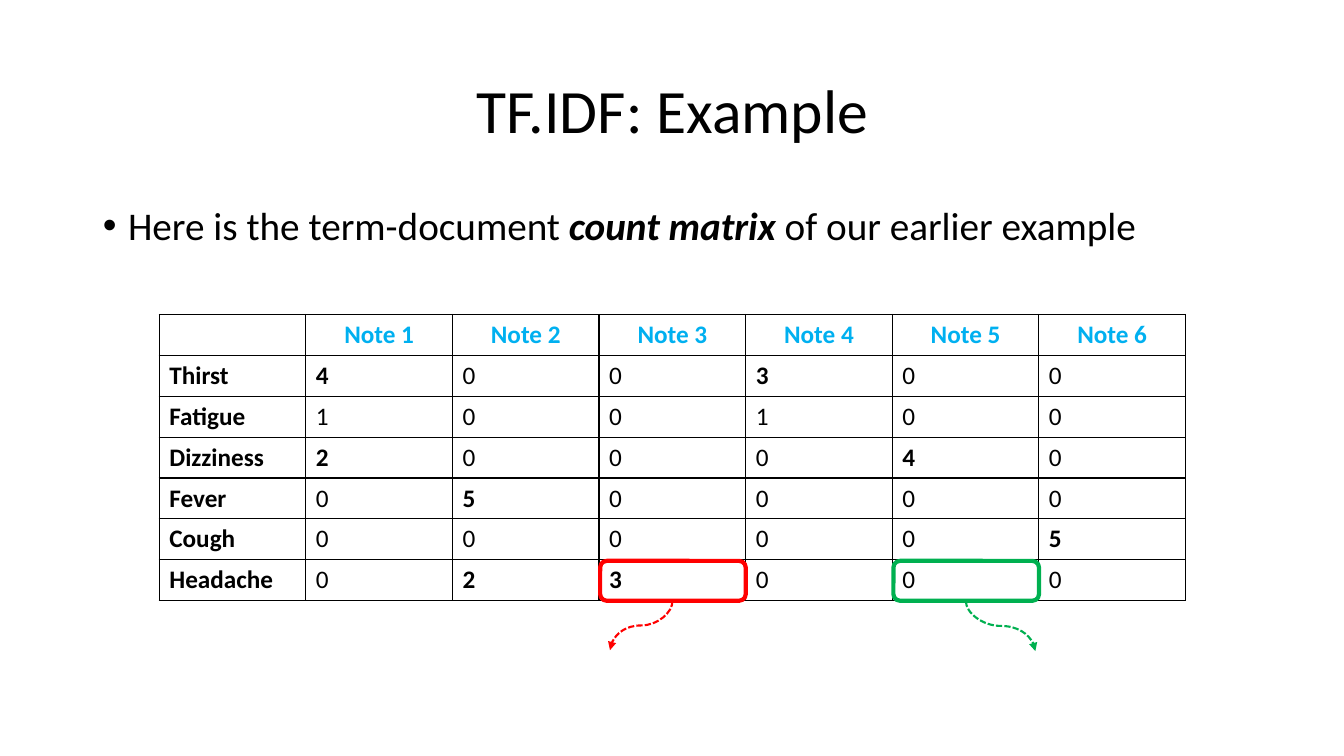
from dataclasses import dataclass

from lxml.etree import SubElement
from pptx import Presentation
from pptx.dml.color import RGBColor
from pptx.enum.dml import MSO_LINE
from pptx.enum.shapes import MSO_CONNECTOR, MSO_SHAPE
from pptx.enum.text import MSO_ANCHOR, PP_ALIGN
from pptx.oxml.ns import qn
from pptx.util import Inches, Pt

COLORS = {"text": "000000", "note": "00B0F0", "red": "FF0000", "green": "00B050"}
FONT = "Calibri"

TABLE_LEFT, TABLE_TOP = 1.58, 3.12
TABLE_WIDTH, TABLE_HEIGHT = 10.18, 2.84
NOTES = [f"Note {number}" for number in range(1, 7)]
COUNTS = {
    "Thirst": (4, 0, 0, 3, 0, 0),
    "Fatigue": (1, 0, 0, 1, 0, 0),
    "Dizziness": (2, 0, 0, 0, 4, 0),
    "Fever": (0, 5, 0, 0, 0, 0),
    "Cough": (0, 0, 0, 0, 0, 5),
    "Headache": (0, 2, 3, 0, 0, 0),
}
COLUMN_WIDTH = TABLE_WIDTH / (len(NOTES) + 1)
ROW_HEIGHT = TABLE_HEIGHT / (len(COUNTS) + 1)


@dataclass
class Highlight:
    """A framed table cell with a curved arrow that drops away from it."""
    row: int
    column: int
    color: str
    shift: float
    drop: float


HIGHLIGHTS = [
    Highlight(row=6, column=3, color="red", shift=-0.62, drop=0.49),
    Highlight(row=6, column=5, color="green", shift=0.69, drop=0.5),
]


def rgb(name: str) -> RGBColor:
    return RGBColor.from_string(COLORS[name])


def add_text(paragraph, text: str, *, size: float, color: str = "text",
             bold: bool = False, italic: bool = False, align=None) -> None:
    run = paragraph.add_run()
    run.text = text
    font = run.font
    font.name, font.size, font.bold, font.italic = FONT, Pt(size), bold, italic
    font.color.rgb = rgb(color)
    if align is not None:
        paragraph.alignment = align


def place(shape, left: float, top: float, width: float, height: float) -> None:
    shape.left, shape.top = Inches(left), Inches(top)
    shape.width, shape.height = Inches(width), Inches(height)


def add_title(slide) -> None:
    title = slide.shapes.title
    place(title, 0.92, 0.4, 11.5, 1.45)
    title.text_frame.vertical_anchor = MSO_ANCHOR.MIDDLE
    paragraph = title.text_frame.paragraphs[0]
    paragraph.line_spacing = 0.9
    add_text(paragraph, "TF.IDF: Example", size=44, align=PP_ALIGN.CENTER)


def add_body(slide) -> None:
    body = slide.placeholders[1]
    place(body, 0.92, 2, 11.72, 5.1)
    paragraph = body.text_frame.paragraphs[0]
    paragraph.line_spacing, paragraph.space_before = 0.9, Pt(10)
    properties = paragraph._p.get_or_add_pPr()
    properties.set("marL", str(Inches(0.25)))
    properties.set("indent", str(Inches(-0.25)))
    SubElement(properties, qn("a:buFont"), typeface="Arial")
    SubElement(properties, qn("a:buChar"), char="•")
    add_text(paragraph, "Here is the term-document ", size=28)
    add_text(paragraph, "count matrix ", size=28, bold=True, italic=True)
    add_text(paragraph, "of our earlier example", size=28)


def outline_cell(cell) -> None:
    properties = cell._tc.get_or_add_tcPr()
    for side in ("a:lnL", "a:lnR", "a:lnT", "a:lnB"):
        line = SubElement(properties, qn(side), w=str(Pt(1)))
        fill = SubElement(line, qn("a:solidFill"))
        SubElement(fill, qn("a:srgbClr"), val=COLORS["text"])
    cell.fill.background()


def add_count_matrix(slide) -> None:
    rows = [("", *NOTES), *((term, *counts) for term, counts in COUNTS.items())]
    table = slide.shapes.add_table(
        len(rows), len(rows[0]), Inches(TABLE_LEFT), Inches(TABLE_TOP),
        Inches(TABLE_WIDTH), Inches(TABLE_HEIGHT)).table
    table.first_row = table.horz_banding = False
    for row_index, values in enumerate(rows):
        for column_index, value in enumerate(values):
            cell = table.cell(row_index, column_index)
            outline_cell(cell)
            paragraph = cell.text_frame.paragraphs[0]
            if value == "":
                paragraph.font.size = Pt(18)
            elif row_index == 0:
                add_text(paragraph, value, size=18, color="note", bold=True,
                         align=PP_ALIGN.CENTER)
            else:
                add_text(paragraph, str(value), size=18,
                         bold=column_index == 0 or value > 1)


def add_curved_arrow(slide, left: float, top: float, mark: Highlight) -> None:
    """Start downwards at (left, top): a horizontal curve turned by a quarter."""
    middle_x, middle_y = left + mark.shift / 2, top + mark.drop / 2
    to_right = mark.shift > 0
    half_width = -mark.drop / 2 if to_right else mark.drop / 2
    half_height = abs(mark.shift) / 2
    arrow = slide.shapes.add_connector(
        MSO_CONNECTOR.CURVE,
        Inches(middle_x - half_width), Inches(middle_y - half_height),
        Inches(middle_x + half_width), Inches(middle_y + half_height))
    arrow.line.color.rgb = rgb(mark.color)
    arrow.line.width = Pt(1.5)
    arrow.line.dash_style = MSO_LINE.SQUARE_DOT
    properties = arrow._element.spPr
    quarter_turns = 3 if to_right else 1
    properties.find(qn("a:xfrm")).set("rot", str(quarter_turns * 90 * 60000))
    SubElement(properties.find(qn("a:ln")), qn("a:tailEnd"), type="triangle")
    SubElement(properties, qn("a:effectLst"))


def add_highlight(slide, mark: Highlight) -> None:
    left = TABLE_LEFT + mark.column * COLUMN_WIDTH
    top = TABLE_TOP + mark.row * ROW_HEIGHT
    frame = slide.shapes.add_shape(
        MSO_SHAPE.ROUNDED_RECTANGLE, Inches(left + 0.01), Inches(top + 0.01),
        Inches(COLUMN_WIDTH - 0.01), Inches(ROW_HEIGHT - 0.01))
    frame.shadow.inherit = False
    frame.fill.background()
    frame.line.color.rgb = rgb(mark.color)
    frame.line.width = Pt(3)
    add_curved_arrow(slide, left + COLUMN_WIDTH / 2, top + ROW_HEIGHT, mark)


def main() -> None:
    presentation = Presentation()
    presentation.slide_width = Inches(13.33)
    presentation.slide_height = Inches(7.5)
    slide = presentation.slides.add_slide(presentation.slide_layouts[1])
    add_title(slide)
    add_body(slide)
    add_count_matrix(slide)
    for mark in HIGHLIGHTS:
        add_highlight(slide, mark)
    presentation.save("out.pptx")


if __name__ == "__main__":
    main()
